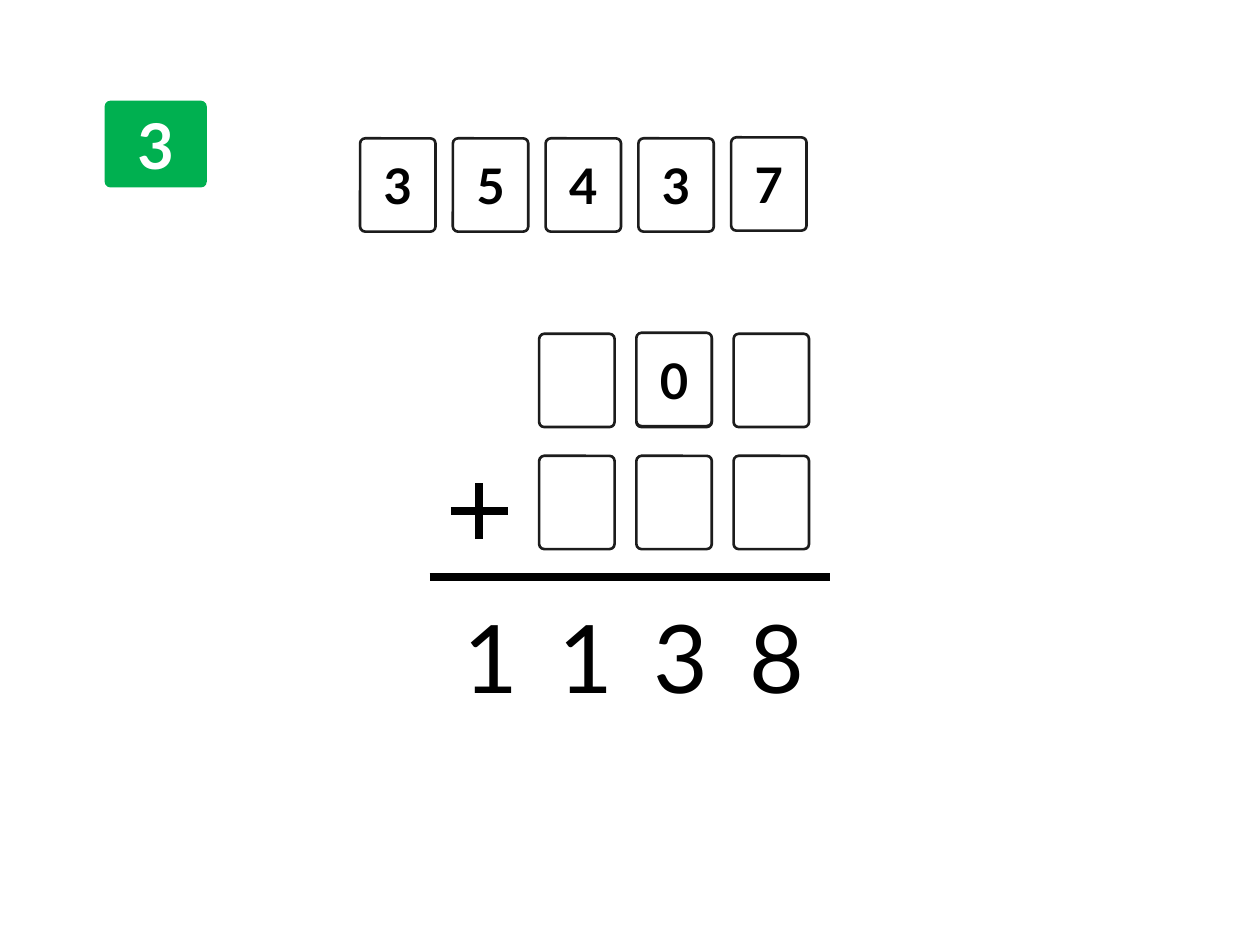
from lxml import etree
from pptx import Presentation
from pptx import util as u
from pptx.dml import color
from pptx.enum import shapes, text
from pptx.oxml import ns


def paint(hex_code):
    return color.RGBColor.from_string(hex_code)


class PuzzleSlide:
    font = "Lato"
    ink = "000000"
    paper = "FFFFFF"
    outline = "1C1C1C"
    badge_fill = "00B050"
    card_width, card_height = 1.52, 1.88

    def __init__(self, deck):
        self.slide = deck.slides.add_slide(deck.slide_layouts[6])

    def label(self, frame, wording, size, hue, bold):
        paragraph = frame.paragraphs[0]
        paragraph.text = wording
        paragraph.alignment = text.PP_ALIGN.CENTER
        paragraph.font.name = self.font
        paragraph.font.size = u.Pt(size)
        paragraph.font.bold = bold
        paragraph.font.color.rgb = paint(hue)

    def tile(self, left, top, width, height, fill):
        tile = self.slide.shapes.add_shape(
            shapes.MSO_SHAPE.ROUNDED_RECTANGLE,
            u.Cm(left), u.Cm(top), u.Cm(width), u.Cm(height))
        tile.adjustments[0] = 0.067
        tile.shadow.inherit = False
        tile.fill.solid()
        tile.fill.fore_color.rgb = paint(fill)
        tile.text_frame.vertical_anchor = text.MSO_ANCHOR.MIDDLE
        return tile

    def badge(self, left, top, number):
        badge = self.tile(left, top, 2.06, 1.75, self.badge_fill)
        badge.line.fill.background()
        self.label(badge.text_frame, number, 36, self.paper, True)

    def card(self, left, top, digit=""):
        card = self.tile(left, top, self.card_width, self.card_height, self.paper)
        card.line.color.rgb = paint(self.outline)
        card.line.width = u.Pt(1.5)
        if digit:
            self.label(card.text_frame, digit, 28, self.ink, True)

    def rule(self, x1, y1, x2, y2):
        rule = self.slide.shapes.add_connector(
            shapes.MSO_CONNECTOR.STRAIGHT,
            u.Cm(x1), u.Cm(y1), u.Cm(x2), u.Cm(y2))
        rule.line.color.rgb = paint(self.ink)
        rule.line.width = u.Pt(4.5)
        etree.SubElement(rule.element.spPr, ns.qn("a:effectLst"))

    def sum_digit(self, left, top, digit):
        box = self.slide.shapes.add_textbox(
            u.Cm(left), u.Cm(top), u.Cm(1.4), u.Cm(2.57))
        box.text_frame.word_wrap = True
        box.text_frame.auto_size = text.MSO_AUTO_SIZE.SHAPE_TO_FIT_TEXT
        self.label(box.text_frame, digit, 54, self.ink, False)


def main():
    deck = Presentation()
    deck.slide_width, deck.slide_height = u.Cm(25.4), u.Cm(19.05)
    puzzle = PuzzleSlide(deck)

    puzzle.badge(2.11, 2.03, "3")

    puzzle.rule(8.66, 11.63, 16.74, 11.63)
    puzzle.rule(9.65, 10.87, 9.65, 9.73)
    puzzle.rule(9.09, 10.31, 10.24, 10.31)
    for place, digit in enumerate("1138"):
        puzzle.sum_digit(9.09 + 1.92 * place, 11.96, digit)

    for addend in range(2):
        for place in range(3):
            puzzle.card(10.87 + 1.96 * place, 6.73 + 2.46 * addend)
    puzzle.card(12.83, 6.71, "0")

    for position, digit in enumerate("35437"):
        puzzle.card(7.26 + 1.87 * position, 2.77 if digit == "7" else 2.79, digit)

    deck.save("out.pptx")


if __name__ == "__main__":
    main()
